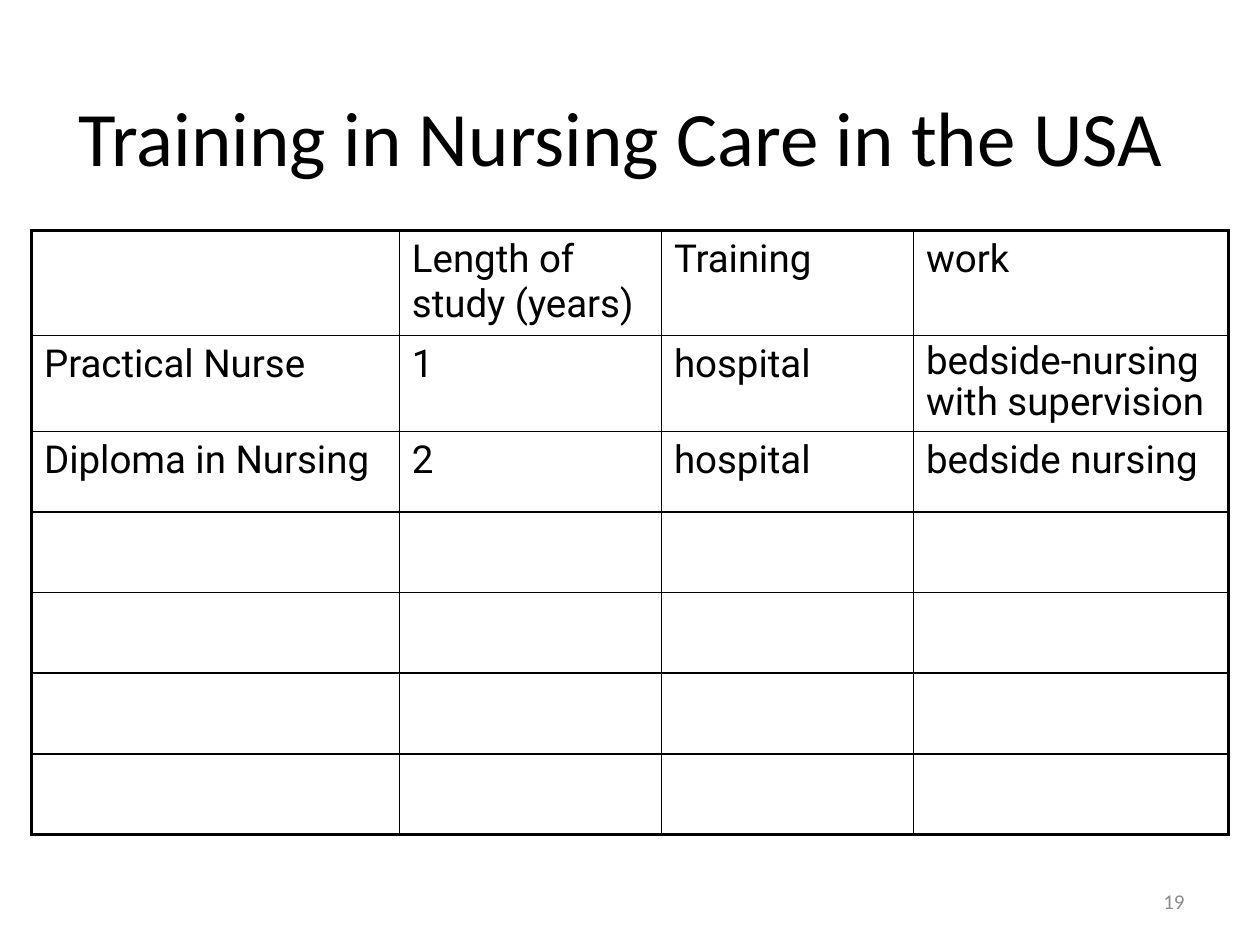
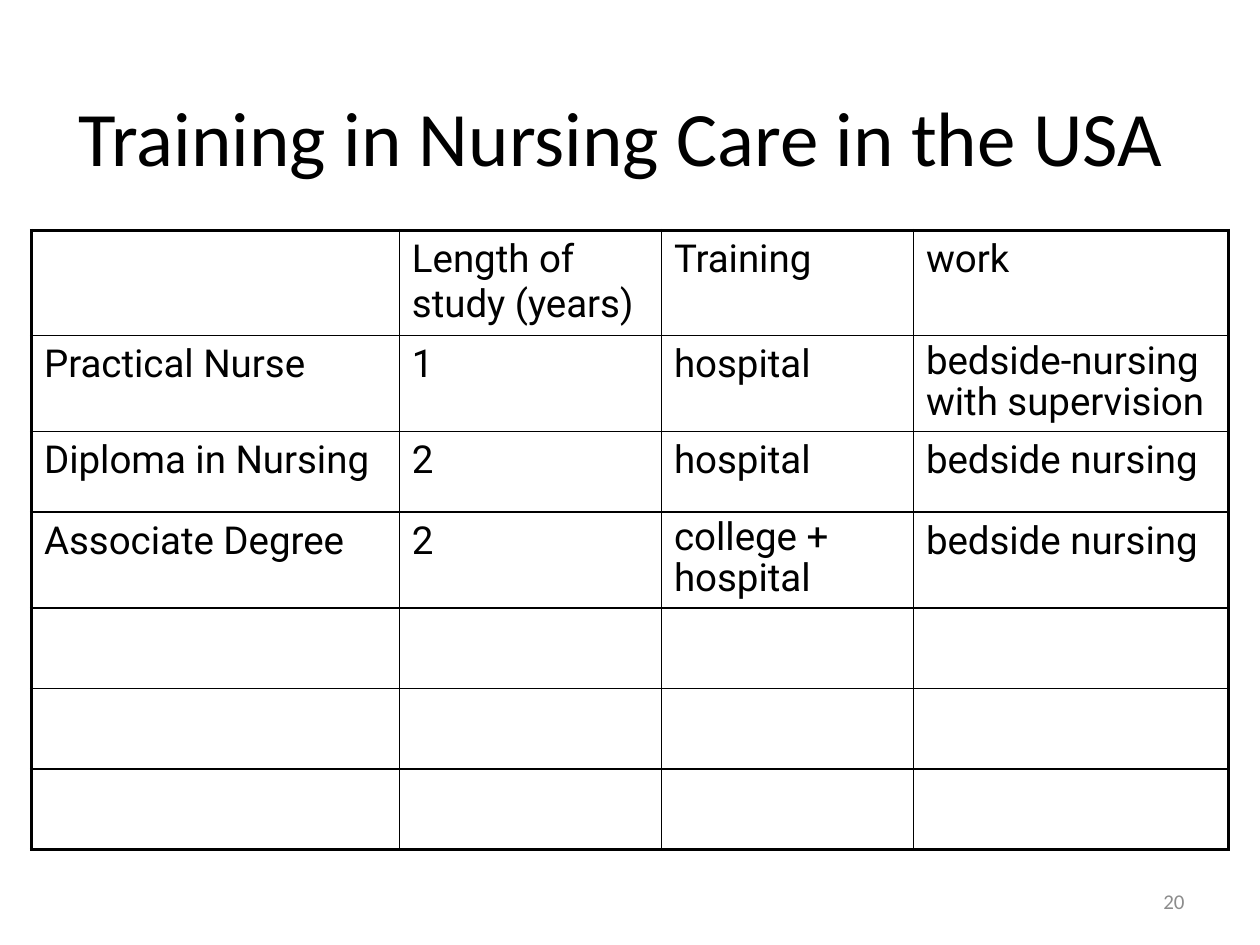
from lxml.etree import SubElement
from pptx import Presentation
from pptx.dml.color import RGBColor
from pptx.enum.text import MSO_ANCHOR, PP_ALIGN
from pptx.oxml.ns import qn
from pptx.util import Inches, Pt

THEME = {
    "ink": "000000",
    "paper": "FFFFFF",
    "title": {"name": "Calibri", "size": Pt(44), "color": "000000"},
    "cell": {"name": "Roboto", "size": Pt(22), "color": "000000"},
    "number": {"name": "Calibri", "size": Pt(12), "color": "8C8C8C"},
    "inner": Pt(1),
    "outer": Pt(2.25),
}
TITLE = "Training in Nursing Care in the USA "
HEADER = ["", "Length of study (years)", "Training", "work"]
TRAINING = [
    ["Practical Nurse", "1", "hospital", "bedside-nursing with supervision"],
    ["Diploma in Nursing", "2", "hospital", "bedside nursing"],
    ["Associate Degree", "2", "college + hospital", "bedside nursing"],
]
TIGHT = {"bedside-nursing with supervision", "college + hospital"}
COL_WIDTHS = [2.92, 2.08, 2, 2.5]
ROW_COUNT, ROW_HEIGHT = 7, 0.64
# Slide number and how many training rows are filled in
SLIDES = [(19, 2), (20, 3)]


def write(tf, text, style, align=PP_ALIGN.LEFT):
    p = tf.paragraphs[0]
    p.alignment = align
    r = p.add_run()
    r.text = text
    for key, value in THEME[style].items():
        if key == "color":
            r.font.color.rgb = RGBColor.from_string(value)
        else:
            setattr(r.font, key, value)
    return p


def set_borders(cell, widths):
    """Draw the cell's edges; widths maps L, R, T and B, in that order."""
    tc_pr = cell._tc.get_or_add_tcPr()
    for side, width in widths.items():
        ln = SubElement(tc_pr, qn(f"a:ln{side}"), w=str(width))
        fill = SubElement(ln, qn("a:solidFill"))
        SubElement(fill, qn("a:srgbClr"), val=THEME["ink"])


prs = Presentation()
prs.slide_width, prs.slide_height = Inches(10), Inches(7.5)

for number, filled in SLIDES:
    s = prs.slides.add_slide(prs.slide_layouts[6])

    for text, style, align, box in [
        (TITLE, "title", PP_ALIGN.CENTER, (0.5, 0.32, 9, 1.51)),
        (str(number), "number", PP_ALIGN.RIGHT, (7.17, 6.95, 2.33, 0.4)),
    ]:
        tf = s.shapes.add_textbox(*map(Inches, box)).text_frame
        tf.word_wrap = True
        tf.vertical_anchor = MSO_ANCHOR.MIDDLE
        write(tf, text, style, align)

    last_row, last_col = ROW_COUNT - 1, len(COL_WIDTHS) - 1
    table = s.shapes.add_table(
        ROW_COUNT, len(COL_WIDTHS), Inches(0.25), Inches(1.83),
        Inches(sum(COL_WIDTHS)), Inches(ROW_COUNT * ROW_HEIGHT)).table
    table.first_row = table.horz_banding = False
    for col, width in zip(table.columns, COL_WIDTHS):
        col.width = Inches(width)
    for row in table.rows:
        row.height = Inches(ROW_HEIGHT)

    content = [HEADER] + TRAINING[:filled]
    for i in range(ROW_COUNT):
        for j in range(len(COL_WIDTHS)):
            cell = table.cell(i, j)
            on_edge = {"L": j == 0, "R": j == last_col,
                       "T": i == 0, "B": i == last_row}
            set_borders(cell, {side: THEME["outer" if edge else "inner"]
                               for side, edge in on_edge.items()})
            if i == filled:
                cell.fill.solid()
                cell.fill.fore_color.rgb = RGBColor.from_string(THEME["paper"])
            else:
                cell.fill.background()
            text = content[i][j] if i < len(content) else ""
            if text:
                p = write(cell.text_frame, text, "cell")
                if text in TIGHT:
                    p.line_spacing = 0.9

prs.save("out.pptx")
